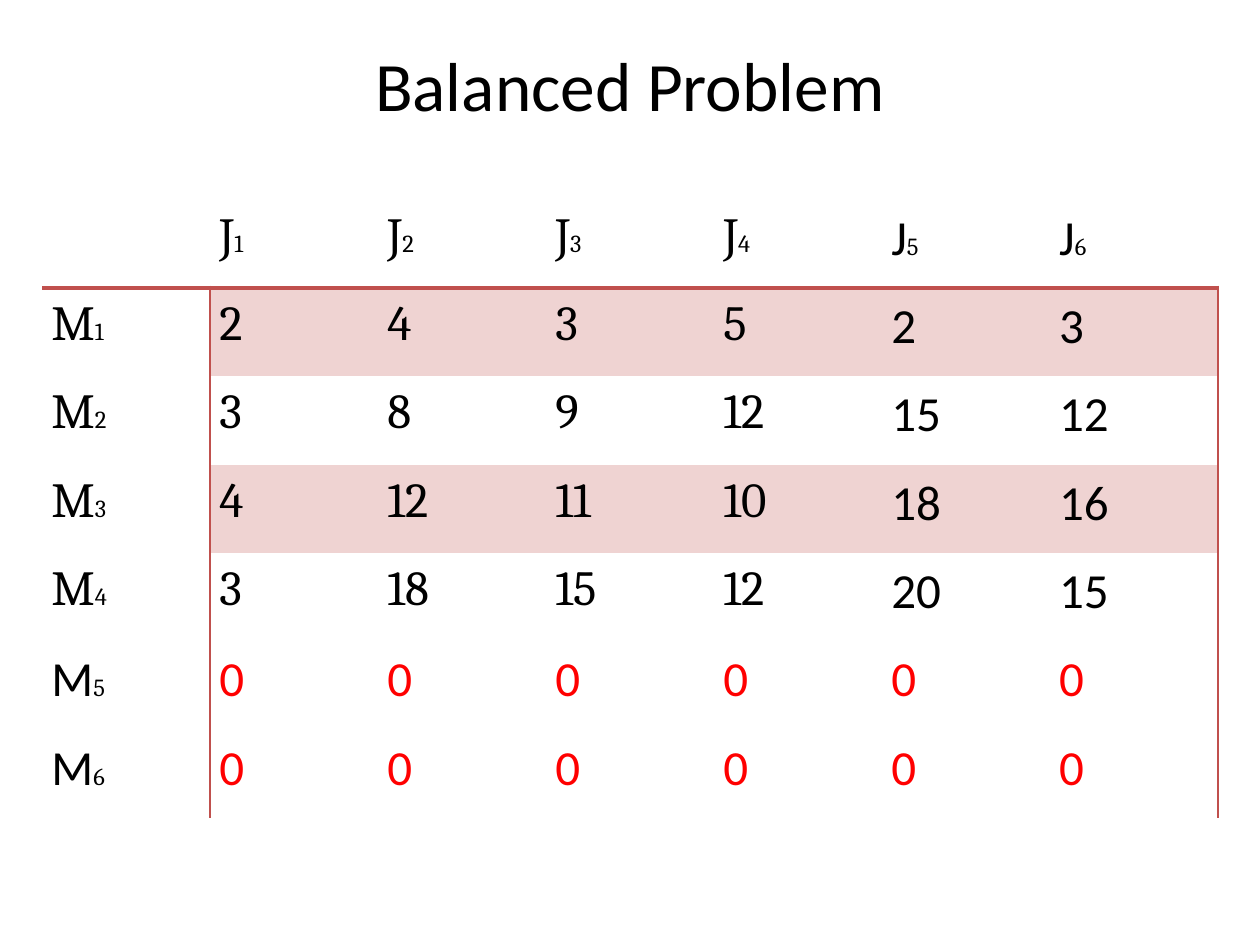
from lxml.etree import SubElement
from pptx import Presentation
from pptx.dml.color import RGBColor
from pptx.enum.text import MSO_ANCHOR, PP_ALIGN
from pptx.oxml.ns import qn
from pptx.util import Pt

COLORS = {"text": "000000", "zero": "FF0000", "rule": "C0504D",
          "band": "EFD3D2", "paper": "FFFFFF"}
COSTS = [
    [2, 4, 3, 5, 2, 3],
    [3, 8, 9, 12, 15, 12],
    [4, 12, 11, 10, 18, 16],
    [3, 18, 15, 12, 20, 15],
    [0] * 6,
    [0] * 6,
]
BANDED_ROWS = (1, 3)
ORIGINAL_SIZE = 4


def format_run(run, font, size, color):
    run.font.name = font
    run.font.size = Pt(size)
    run.font.bold = False
    run.font.color.rgb = RGBColor.from_string(COLORS[color])


def place(part, box):
    part.left, part.top, part.width, part.height = (Pt(n) for n in box)


def add_title(slide, box):
    title = slide.shapes.title
    place(title, box)
    frame = title.text_frame
    frame.text = "Balanced Problem"
    frame.vertical_anchor = MSO_ANCHOR.MIDDLE
    heading = frame.paragraphs[0]
    heading.alignment = PP_ALIGN.CENTER
    format_run(heading.runs[0], "Calibri", 39.6, "text")


def set_borders(cell, widths):
    properties = cell._tc.get_or_add_tcPr()
    for side in "LRTB":
        width = widths.get(side, 0)
        line = SubElement(properties, qn(f"a:ln{side}"), w=str(Pt(width)))
        if width:
            fill = SubElement(line, qn("a:solidFill"))
            SubElement(fill, qn("a:srgbClr"), val=COLORS["rule"])
        else:
            SubElement(line, qn("a:noFill"))


def border_widths(row, column, last_column):
    widths = {}
    if row == 0:
        widths["B"] = 3
    if row == 1:
        widths["T"] = 3
    if row and column == 1:
        widths["L"] = 1
    if row and column in (0, last_column):
        widths["R"] = 1
    return widths


def set_fill(cell, row, column):
    if row and column and row not in BANDED_ROWS:
        cell.fill.background()
        return
    color = "band" if row and column else "paper"
    cell.fill.solid()
    cell.fill.fore_color.rgb = RGBColor.from_string(COLORS[color])


def write_cell(cell, row, column):
    cell.margin_left = cell.margin_right = Pt(5.4)
    cell.margin_top = cell.margin_bottom = Pt(0)
    if row == column == 0:
        return
    added = max(row, column) > ORIGINAL_SIZE
    font = "Calibri" if added else "Cambria"
    entry = cell.text_frame.paragraphs[0]
    entry.line_spacing = 1.15
    if row and column:
        cost = COSTS[row - 1][column - 1]
        entry.text = str(cost)
        format_run(entry.runs[0], font, 28, "text" if cost else "zero")
    else:
        entry.text = "M" if row else "J"
        format_run(entry.runs[0], font, 28, "text")
        index = entry.add_run()
        index.text = str(row or column)
        format_run(index, "Cambria", 14, "text")


def add_cost_table(slide, box):
    left, top, width, height = (Pt(n) for n in box)
    row_count, column_count = len(COSTS) + 1, len(COSTS[0]) + 1
    table = slide.shapes.add_table(row_count, column_count,
                                   left, top, width, height).table
    table.first_row = table.horz_banding = False
    for row in range(row_count):
        for column in range(column_count):
            cell = table.cell(row, column)
            write_cell(cell, row, column)
            set_borders(cell, border_widths(row, column, column_count - 1))
            set_fill(cell, row, column)


def main():
    presentation = Presentation()
    presentation.slide_width, presentation.slide_height = Pt(720), Pt(540)
    slide = presentation.slides.add_slide(presentation.slide_layouts[5])
    add_title(slide, (24, 18, 672, 60))
    add_cost_table(slide, (24, 114, 672, 353.5))
    presentation.save("out.pptx")


if __name__ == "__main__":
    main()
